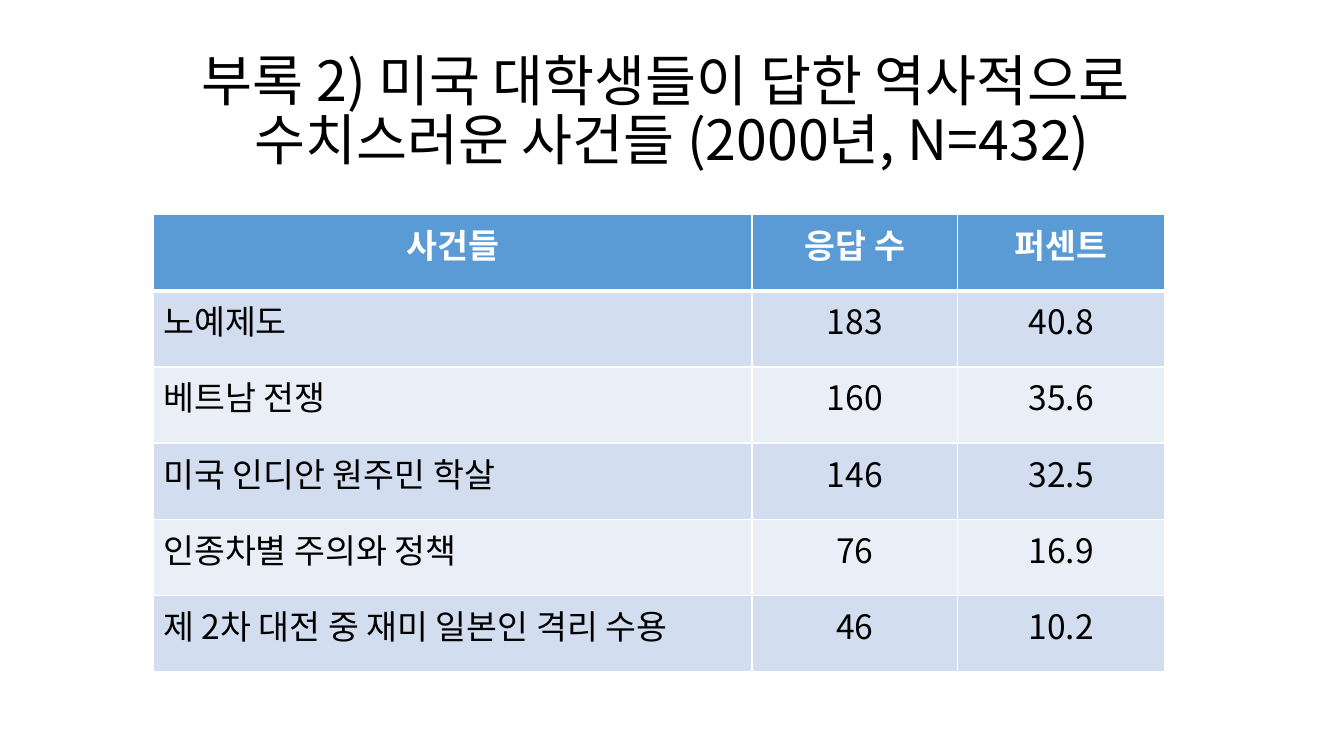
from lxml.etree import SubElement
from pptx import Presentation
from pptx.dml.color import RGBColor
from pptx.enum.text import MSO_ANCHOR, PP_ALIGN
from pptx.oxml import parse_xml
from pptx.oxml.ns import qn
from pptx.util import Cm, Pt

FONT = "Noto Sans CJK KR"
SPACE = "http://schemas.openxmlformats.org/drawingml/2006/main"


def color(text):
    return RGBColor.from_string(text)


def add_run(par, text, size, ink, bold=False):
    run = par.add_run()
    run.text = text
    run.font.size = Pt(size)
    run.font.bold = bold
    run.font.color.rgb = color(ink)
    run.font.name = FONT
    # Korean letters take the East Asian font
    SubElement(run.font._element, qn("a:ea"), typeface=FONT)


deck = Presentation()
deck.slide_width = Cm(33.87)
deck.slide_height = Cm(19.05)
slide = deck.slides.add_slide(deck.slide_layouts[6])

# Title
box = slide.shapes.add_textbox(Cm(2.33), Cm(1.01), Cm(29.21), Cm(3.68))
frame = box.text_frame
frame.word_wrap = True
frame.vertical_anchor = MSO_ANCHOR.MIDDLE
par = frame.paragraphs[0]
par.alignment = PP_ALIGN.CENTER
par.line_spacing = 0.9
add_run(par, "부록 2) 미국 대학생들이 답한 역사적으로 ", 39.6, "000000")
par.add_line_break()
add_run(par, "수치스러운 사건들 (2000년, N=432)", 39.6, "000000")

# Table
rows = [
    ("사건들", "응답 수", "퍼센트"),
    ("노예제도", "183", "40.8"),
    ("베트남 전쟁", "160", "35.6"),
    ("미국 인디안 원주민 학살", "146", "32.5"),
    ("인종차별 주의와 정책", "76", "16.9"),
    ("제 2차 대전 중 재미 일본인 격리 수용", "46", "10.2"),
]
widths = [15.09, 5.18, 5.23]
table = slide.shapes.add_table(
    len(rows), len(widths), Cm(3.86), Cm(5.41), Cm(sum(widths)), Cm(11.51)
).table
for col, width in zip(table.columns, widths):
    col.width = Cm(width)

for i, row in enumerate(rows):
    head = i == 0
    fill = "5B9BD5" if head else ("EAEFF7", "D2DEEF")[i % 2]
    for j, text in enumerate(row):
        cell = table.cell(i, j)
        cell.fill.solid()
        cell.fill.fore_color.rgb = color(fill)
        par = cell.text_frame.paragraphs[0]
        par.alignment = PP_ALIGN.CENTER if head or j else PP_ALIGN.LEFT
        add_run(par, text, 24, "FFFFFF" if head else "000000", head)

        # White borders, thick between header and body
        props = cell._tc.get_or_add_tcPr()
        for k, side in enumerate("LRTB"):
            thick = (head and side == "B") or (i == 1 and side == "T")
            props.insert(k, parse_xml(
                f'<a:ln{side} xmlns:a="{SPACE}" w="{Pt(3 if thick else 1)}">'
                '<a:solidFill><a:srgbClr val="FFFFFF"/></a:solidFill>'
                f'</a:ln{side}>'
            ))

deck.save("out.pptx")
